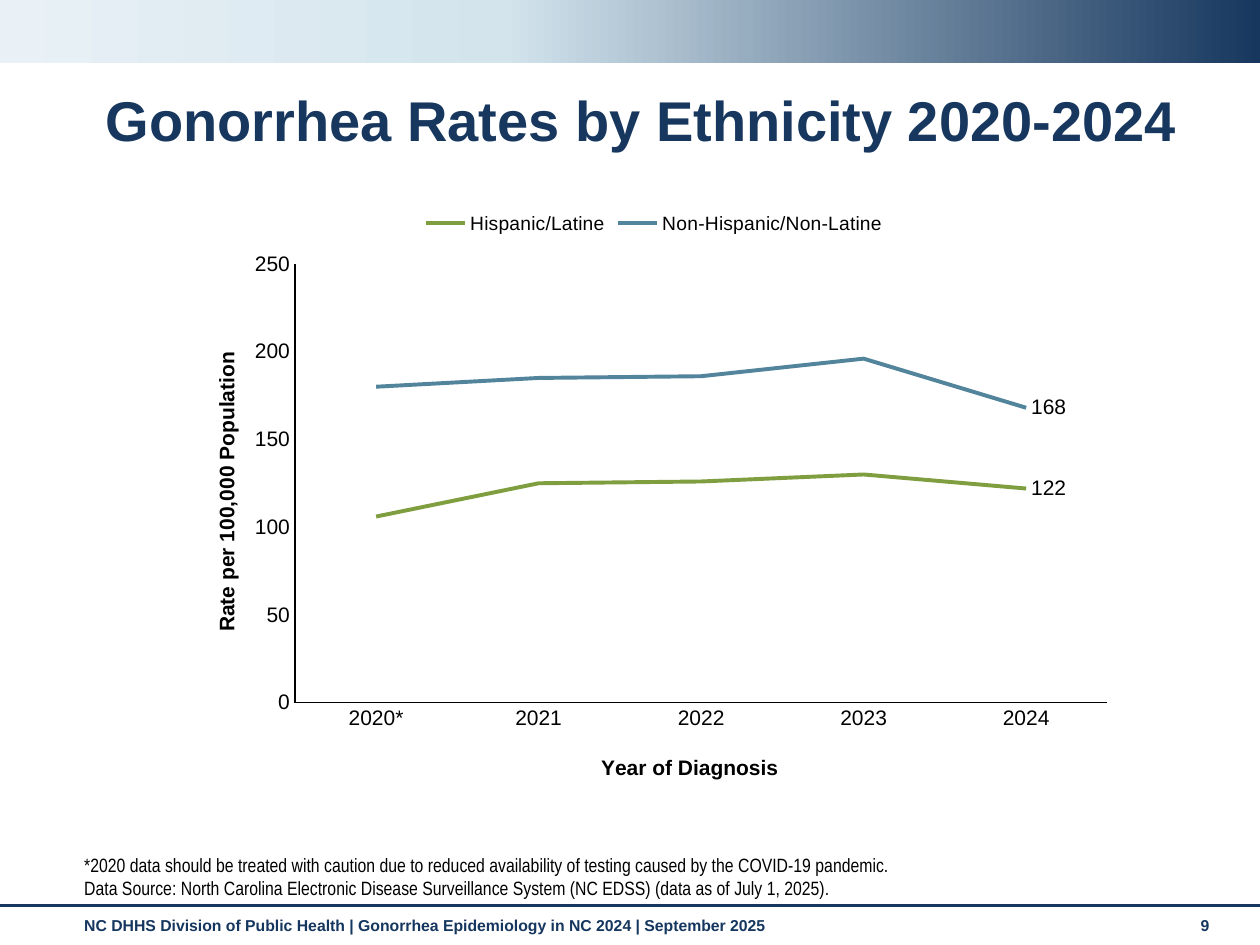
import copy
from dataclasses import dataclass

import lxml.etree
import pptx
import pptx.chart.data
import pptx.dml.color
import pptx.enum.chart
import pptx.enum.shapes
import pptx.enum.text
import pptx.oxml.ns
import pptx.util

Inches = pptx.util.Inches
Pt = pptx.util.Pt
Anchor = pptx.enum.text.MSO_ANCHOR
qn = pptx.oxml.ns.qn


@dataclass(frozen=True)
class Theme:
    navy: str = "17375E"
    footer: str = "15365E"
    black: str = "000000"
    green: str = "7F9E3F"
    blue: str = "52849C"
    band: tuple = ((0, "17375E"), (0.6, "D3E4ED"), (1, "E9F1F6"))
    font: str = "Arial"
    narrow: str = "Arial Narrow"
    title_size: float = 32
    axis_size: float = 12
    legend_size: float = 11
    note_size: float = 11
    footer_size: float = 9


THEME = Theme()


def rgb(color):
    return pptx.dml.color.RGBColor.from_string(color)


def style_font(font, size, color=THEME.black, bold=False, name=THEME.font):
    font.name, font.size, font.bold = name, Pt(size), bold
    font.color.rgb = rgb(color)


def add_text(slide, box, lines, size, color, bold=False, name=THEME.font,
             anchor=Anchor.TOP, spacing=None):
    tf = slide.shapes.add_textbox(*map(Inches, box)).text_frame
    tf.word_wrap = True
    tf.vertical_anchor = anchor
    for i, line in enumerate(lines):
        p = tf.add_paragraph() if i else tf.paragraphs[0]
        p.line_spacing = spacing
        r = p.add_run()
        r.text = line
        style_font(r.font, size, color, bold, name)


def add_band(slide, box, stops):
    sp = slide.shapes.add_shape(pptx.enum.shapes.MSO_SHAPE.RECTANGLE, *map(Inches, box))
    sp.shadow.inherit = False
    sp.line.fill.background()
    sp.fill.gradient()
    sp.fill.gradient_angle = 180
    # A new gradient has two stops; add the third
    stop_list = next(sp._element.iter(qn("a:gsLst")))
    stop_list.append(copy.deepcopy(stop_list[0]))
    for stop, (position, color) in zip(sp.fill.gradient_stops, stops):
        stop.position = position
        stop.color.rgb = rgb(color)


def add_rule(slide, y, width):
    line = slide.shapes.add_connector(
        pptx.enum.shapes.MSO_CONNECTOR.STRAIGHT, 0, Inches(y), Inches(width), Inches(y))
    line.line.color.rgb = rgb(THEME.navy)
    line.line.width = Pt(1.75)
    lxml.etree.SubElement(line._element.spPr, qn("a:effectLst"))


def set_layout(element, index, **values):
    """Place a chart part by fractions of the chart area."""
    for old in element.findall(qn("c:layout")):
        element.remove(old)
    layout = lxml.etree.Element(qn("c:layout"))
    manual = lxml.etree.SubElement(layout, qn("c:manualLayout"))
    if "w" in values:
        lxml.etree.SubElement(manual, qn("c:layoutTarget")).set("val", "inner")
    for mode in ("xMode", "yMode"):
        lxml.etree.SubElement(manual, qn("c:" + mode)).set("val", "edge")
    for key, value in values.items():
        lxml.etree.SubElement(manual, qn("c:" + key)).set("val", str(value))
    element.insert(index, layout)


def style_axis(axis, title, x, y, rotation=0):
    axis.has_major_gridlines = False
    axis.major_tick_mark = axis.minor_tick_mark = pptx.enum.chart.XL_TICK_MARK.NONE
    style_font(axis.tick_labels.font, THEME.axis_size)
    axis.format.line.color.rgb = rgb(THEME.black)
    axis.format.line.width = Pt(0.75)
    tf = axis.axis_title.text_frame
    r = tf.paragraphs[0].add_run()
    r.text = title
    style_font(r.font, THEME.axis_size, bold=True)
    body = tf._txBody.find(qn("a:bodyPr"))
    body.set("rot", str(rotation * 60000))
    body.set("vert", "horz")
    set_layout(axis.axis_title._element, 1, x=x, y=y)


def add_rate_chart(slide, box, years, rates):
    data = pptx.chart.data.CategoryChartData(number_format="#,##0")
    data.categories = years
    for name, _, values in rates:
        data.add_series(name, values)
    chart = slide.shapes.add_chart(
        pptx.enum.chart.XL_CHART_TYPE.LINE, *map(Inches, box), data).chart
    chart.has_title = False
    style_font(chart.font, 10)

    # Legend and plot area
    chart.has_legend = True
    chart.legend.position = pptx.enum.chart.XL_LEGEND_POSITION.TOP
    chart.legend.include_in_layout = False
    style_font(chart.legend.font, THEME.legend_size)
    plot = chart.plots[0]
    plot.vary_by_categories = False
    set_layout(plot._element.getparent(), 0, x=0.12, y=0.11, w=0.86, h=0.73)

    # Axes
    style_axis(chart.category_axis, "Year of Diagnosis", 0.44, 0.92)
    style_axis(chart.value_axis, "Rate per 100,000 Population", 0.03, 0.25, -90)
    chart.value_axis.minimum_scale = 0
    chart.value_axis.maximum_scale = 250
    chart.value_axis.major_unit = 50
    chart.value_axis.tick_labels.number_format = "#,##0"
    chart.value_axis.tick_labels.number_format_is_linked = False

    # Lines, with a label on the latest year only
    for s, (_, color, values) in zip(plot.series, rates):
        s.smooth = False
        s.marker.style = pptx.enum.chart.XL_MARKER_STYLE.NONE
        s.format.line.color.rgb = rgb(color)
        s.format.line.width = Pt(2.25)
        s.data_labels.show_value = False
        label = s.points[len(values) - 1].data_label
        style_font(label.font, THEME.axis_size)
        label.position = pptx.enum.chart.XL_LABEL_POSITION.RIGHT


def main():
    prs = pptx.Presentation()
    prs.slide_width, prs.slide_height = Inches(10), Inches(7.5)
    slide = prs.slides.add_slide(prs.slide_layouts[6])

    # Footer and header band
    add_text(slide, (0.57, 7.22, 8.74, 0.29),
             ["NC DHHS Division of Public Health | Gonorrhea Epidemiology in NC 2024"
              " | September 2025"], THEME.footer_size, THEME.footer, bold=True)
    add_text(slide, (9.43, 7.22, 0.44, 0.3), ["9"],
             THEME.footer_size, THEME.footer, bold=True)
    add_band(slide, (0, 0, 10, 0.5), THEME.band)
    add_rule(slide, 7.19, 10)

    # Title and notes
    add_text(slide, (0.74, 0.68, 8.8, 0.6), ["Gonorrhea Rates by Ethnicity 2020-2024"],
             THEME.title_size, THEME.navy, bold=True, anchor=Anchor.MIDDLE, spacing=0.9)
    add_text(slide, (0.57, 6.83, 9.1, 0.36),
             ["*2020 data should be treated with caution due to reduced availability of"
              " testing caused by the COVID-19 pandemic.",
              "Data Source: North Carolina Electronic Disease Surveillance System"
              " (NC EDSS) (data as of July 1, 2025)."],
             THEME.note_size, THEME.black, name=THEME.narrow, anchor=Anchor.BOTTOM)

    # Rates per year
    add_rate_chart(slide, (1.44, 1.57, 7.5, 4.77),
                   ["2020*", "2021", "2022", "2023", "2024"],
                   [("Hispanic/Latine", THEME.green, (106, 125, 126, 130, 122)),
                    ("Non-Hispanic/Non-Latine", THEME.blue, (180, 185, 186, 196, 168))])
    prs.save("out.pptx")


if __name__ == "__main__":
    main()
